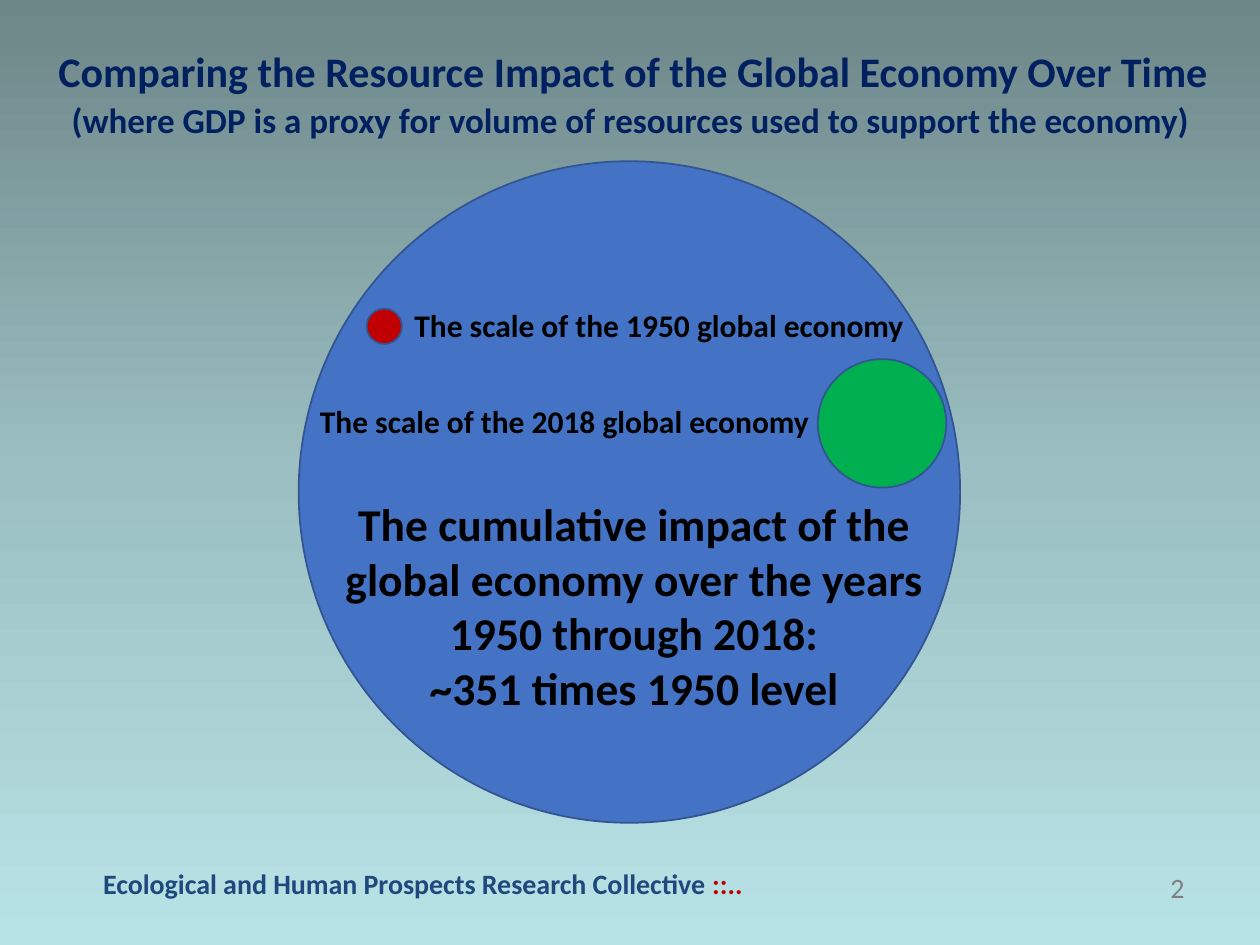
from copy import deepcopy

from pptx import Presentation
from pptx.dml.color import RGBColor
from pptx.enum.shapes import MSO_SHAPE
from pptx.enum.text import MSO_ANCHOR, MSO_AUTO_SIZE, PP_ALIGN
from pptx.util import Inches, Pt

NAVY = RGBColor(0x00, 0x20, 0x60)
FOOTER_BLUE = RGBColor(0x1F, 0x49, 0x7D)
GRAY = RGBColor(0x80, 0x80, 0x80)
BLACK = RGBColor(0x00, 0x00, 0x00)
BLUE = RGBColor(0x44, 0x72, 0xC4)
OUTLINE = RGBColor(0x32, 0x54, 0x91)
RED = RGBColor(0xC0, 0x00, 0x00)
GREEN = RGBColor(0x00, 0xB0, 0x50)
BACKGROUND = [
    (0, RGBColor(0x6D, 0x86, 0x88)),
    (0.5, RGBColor(0x9B, 0xBF, 0xC2)),
    (1, RGBColor(0xB8, 0xE3, 0xE6)),
]


def write(shape, box, text, size, color, align=PP_ALIGN.LEFT, bold=True, wrap=False):
    """Place a text shape and format each line of text as a paragraph."""
    shape.left, shape.top, shape.width, shape.height = map(Inches, box)
    tf = shape.text_frame
    tf.text = text
    tf.word_wrap = wrap
    tf.auto_size = MSO_AUTO_SIZE.NONE
    tf.vertical_anchor = MSO_ANCHOR.TOP
    for p in tf.paragraphs:
        p.alignment = align
        for r in p.runs:
            r.font.name = "Calibri"
            r.font.size = Pt(size)
            r.font.bold = bold
            r.font.color.rgb = color
    return tf


def new_box():
    return s.shapes.add_textbox(0, 0, Inches(1), Inches(1))


prs = Presentation()
prs.slide_width, prs.slide_height = Inches(10), Inches(7.5)
s = prs.slides.add_slide(prs.slide_layouts[5])

# Background gradient, dark at the top
fill = s.background.fill
fill.gradient()
fill.gradient_angle = 270
gs_list = s.element.xpath(".//a:gsLst")[0]
gs_list.append(deepcopy(gs_list[-1]))
for stop, (position, color) in zip(fill.gradient_stops, BACKGROUND):
    stop.position = position
    stop.color.rgb = color

# Footer and slide number
tf = write(new_box(), (0.72, 6.83, 5.57, 0.4),
           "Ecological and Human Prospects Research Collective ", 16, FOOTER_BLUE)
r = tf.paragraphs[0].add_run()
r.text = "::.."
r.font.name = "Calibri"
r.font.size = Pt(16)
r.font.bold = True
r.font.color.rgb = RED
write(new_box(), (8.42, 6.86, 1.08, 0.5), "2", 16, GRAY, PP_ALIGN.RIGHT, bold=False)

# Title and subtitle
write(s.shapes.title, (0.32, 0.31, 9.41, 0.5),
      "Comparing the Resource Impact of the Global Economy Over Time",
      24, NAVY, PP_ALIGN.CENTER)
write(new_box(), (0.43, 0.73, 9.15, 0.44),
      "(where GDP is a proxy for volume of resources used to support the economy)",
      20, NAVY, PP_ALIGN.CENTER)

# Circles: cumulative impact, 1950 economy, 2018 economy
for left, top, diameter, color in [
    (2.37, 1.28, 5.25, BLUE),
    (2.91, 2.45, 0.28, RED),
    (6.49, 2.85, 1.02, GREEN),
]:
    sp = s.shapes.add_shape(MSO_SHAPE.FLOWCHART_CONNECTOR, Inches(left), Inches(top),
                            Inches(diameter), Inches(diameter))
    sp.shadow.inherit = False
    sp.fill.solid()
    sp.fill.fore_color.rgb = color
    sp.line.color.rgb = OUTLINE
    sp.line.width = Pt(1)

# Circle labels
write(new_box(), (3.19, 2.38, 4.28, 0.4),
      "The scale of the 1950 global economy", 18, BLACK)
write(new_box(), (2.44, 3.14, 4.72, 0.4),
      "The scale of the 2018 global economy", 18, BLACK, wrap=True)
write(new_box(), (2.41, 3.89, 5.25, 1.85),
      "The cumulative impact of the global economy over the years 1950 through 2018:\n"
      "~351 times 1950 level", 26, BLACK, PP_ALIGN.CENTER, wrap=True)

prs.save("out.pptx")
